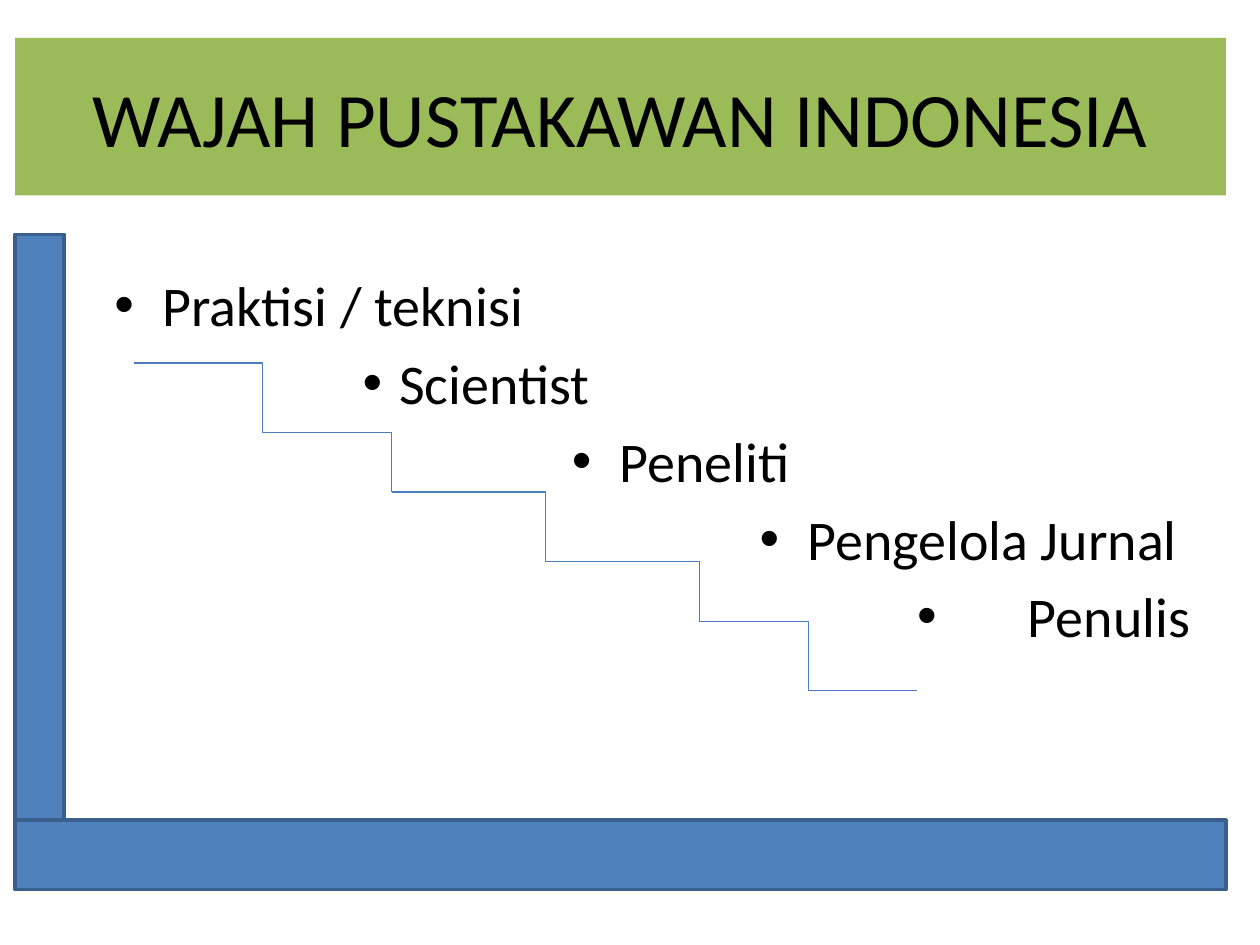
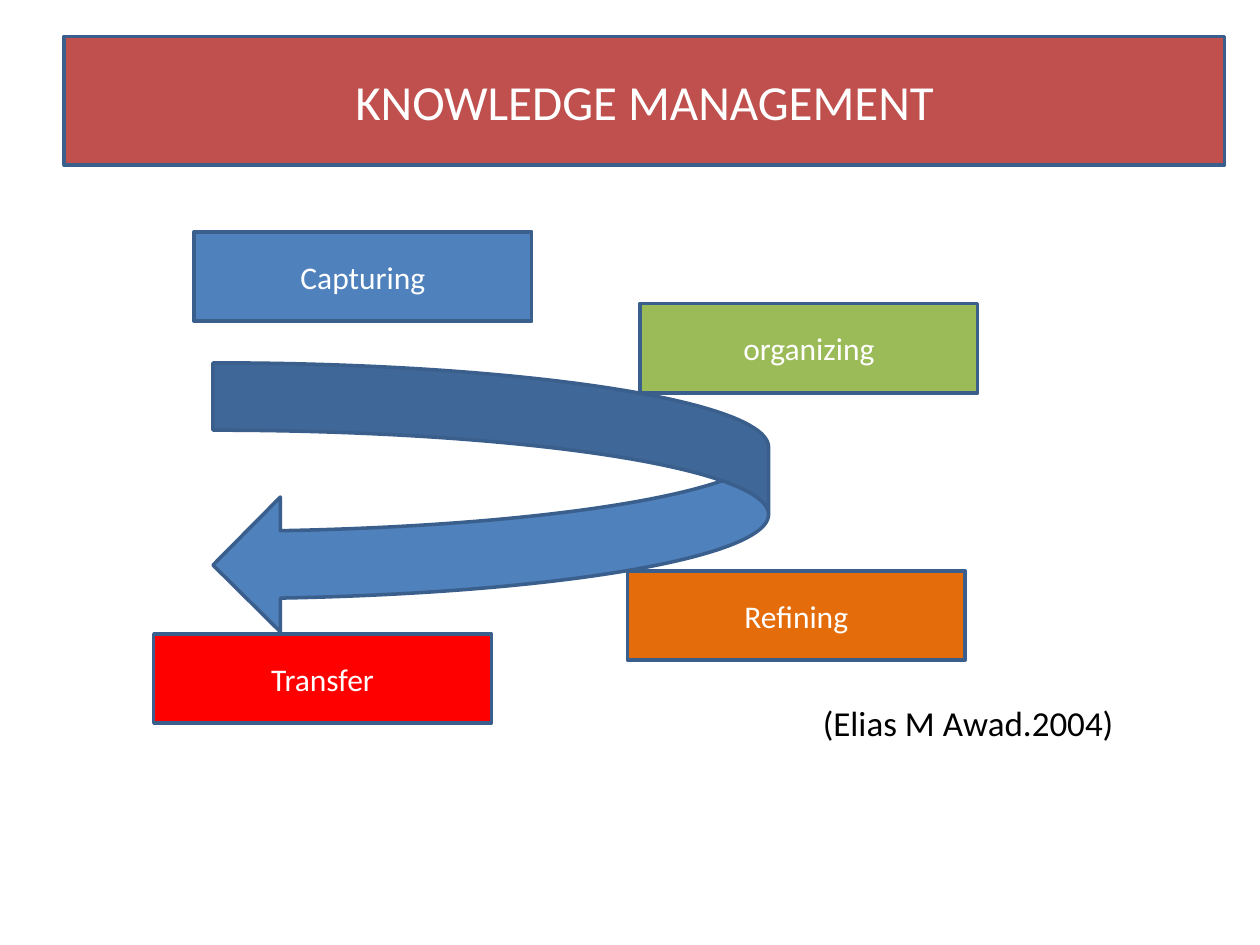
"""Build two slides: the career steps of librarians and the knowledge management cycle."""
from lxml.etree import SubElement
from pptx import Presentation
from pptx.dml.color import RGBColor
from pptx.enum.shapes import MSO_CONNECTOR as Connector, MSO_SHAPE as Preset
from pptx.enum.text import MSO_ANCHOR as Anchor, MSO_AUTO_SIZE as AutoSize, PP_ALIGN as Align
from pptx.oxml.ns import qn
from pptx.util import Inches, Pt

FONT = "Calibri"
COLOURS = {
    "blue": "4F81BD", "outline": "3A5F8C", "step": "4B7EBC", "green": "9BBB59",
    "brick": "C0504D", "orange": "E46C0A", "red": "FF0000",
    "black": "000000", "white": "FFFFFF",
}

CAREER_TITLE = "WAJAH PUSTAKAWAN INDONESIA"
ROLES = [
    ("Praktisi / teknisi", 0.38, 0.38),
    ("Scientist", 2.26, 0.29),
    ("Peneliti", 4.01, 0.38),
    ("Pengelola Jurnal", 5.5, 0.38),
    ("Penulis", 7.25, 0.88),
]
STAIR_LEFT, STAIR_TOP, STAIR_DROP, STAIR_PITCH = 1.06, 2.88, 0.55, 1.025
STAIR_ENDS = [3.11, 5.55, 7.28]
FRAME_BARS = [(0.12, 1.86, 0.39, 5.19), (0.12, 6.51, 9.61, 0.55)]

CYCLE_TITLE = "KNOWLEDGE MANAGEMENT"
STAGE_SIZE = (2.68, 0.71)
STAGES = [
    ("Capturing", "blue", 1.54, 1.84),
    ("organizing", "green", 5.08, 2.41),
    ("Refining", "orange", 4.98, 4.53),
    ("Transfer", "red", 1.22, 5.03),
]
CITATION = "(Elias M Awad.2004)"


def colour(name):
    return RGBColor.from_string(COLOURS[name])


def add_run(paragraph, text, size, ink):
    run = paragraph.add_run()
    run.text = text
    run.font.name = FONT
    run.font.size = Pt(size)
    run.font.color.rgb = colour(ink)


def add_block(slide, box, fill, text="", size=18, ink="white", outlined=True, preset=Preset.RECTANGLE):
    shape = slide.shapes.add_shape(preset, *map(Inches, box))
    shape.shadow.inherit = False
    shape.fill.solid()
    shape.fill.fore_color.rgb = colour(fill)
    if outlined:
        shape.line.color.rgb = colour("outline")
        shape.line.width = Pt(2)
    else:
        shape.line.fill.background()
    if text:
        shape.text_frame.vertical_anchor = Anchor.MIDDLE
        paragraph = shape.text_frame.paragraphs[0]
        paragraph.alignment = Align.CENTER
        add_run(paragraph, text, size, ink)


def add_text_frame(slide, box):
    frame = slide.shapes.add_textbox(*map(Inches, box)).text_frame
    frame.word_wrap = True
    return frame


def add_step(slide, kind, *ends):
    connector = slide.shapes.add_connector(kind, *map(Inches, ends))
    connector.line.color.rgb = colour("step")
    connector.line.width = Pt(0.75)
    SubElement(connector.element.spPr, qn("a:effectLst"))


def set_bullet(paragraph, margin, hanging):
    properties = paragraph._p.get_or_add_pPr()
    properties.set("marL", str(Inches(margin)))
    properties.set("indent", str(-Inches(hanging)))
    SubElement(properties, qn("a:buFont")).set("typeface", "Arial")
    SubElement(properties, qn("a:buChar")).set("char", "•")


def add_roles(slide):
    frame = add_text_frame(slide, (0.81, 2.1, 8.99, 4.45))
    for index, (role, margin, hanging) in enumerate(ROLES):
        paragraph = frame.add_paragraph() if index else frame.paragraphs[0]
        paragraph.space_before = Pt(6)
        set_bullet(paragraph, margin, hanging)
        add_run(paragraph, role, 32, "black")


def add_stairs(slide):
    starts = [STAIR_LEFT] + STAIR_ENDS[:-1]
    for index, (start, end) in enumerate(zip(starts, STAIR_ENDS)):
        top = STAIR_TOP + index * STAIR_PITCH
        bottom = top + STAIR_DROP
        add_step(slide, Connector.ELBOW, start, top, end, bottom)
        if index < len(STAIR_ENDS) - 1:
            add_step(slide, Connector.STRAIGHT, end, bottom, end, top + STAIR_PITCH)


def build_career_slide(slide):
    add_block(slide, (0.12, 0.3, 9.61, 1.25), "green", CAREER_TITLE, 44, "black", outlined=False)
    add_roles(slide)
    add_stairs(slide)
    for bar in FRAME_BARS:
        add_block(slide, bar, "blue")


def build_cycle_slide(slide):
    add_block(slide, (0.51, 0.29, 9.21, 1.02), "brick", CYCLE_TITLE, 28)
    for stage, fill, left, top in STAGES:
        add_block(slide, (left, top, *STAGE_SIZE), fill, stage)
    add_block(slide, (1.69, 2.88, 4.41, 2.14), "blue", preset=Preset.CURVED_LEFT_ARROW)
    frame = add_text_frame(slide, (6.27, 5.52, 2.83, 0.44))
    frame.auto_size = AutoSize.SHAPE_TO_FIT_TEXT
    frame.paragraphs[0].alignment = Align.CENTER
    add_run(frame.paragraphs[0], CITATION, 20, "black")


def main():
    presentation = Presentation()
    presentation.slide_width, presentation.slide_height = Inches(10), Inches(7.5)
    for build in (build_career_slide, build_cycle_slide):
        build(presentation.slides.add_slide(presentation.slide_layouts[6]))
    presentation.save("out.pptx")


if __name__ == "__main__":
    main()
